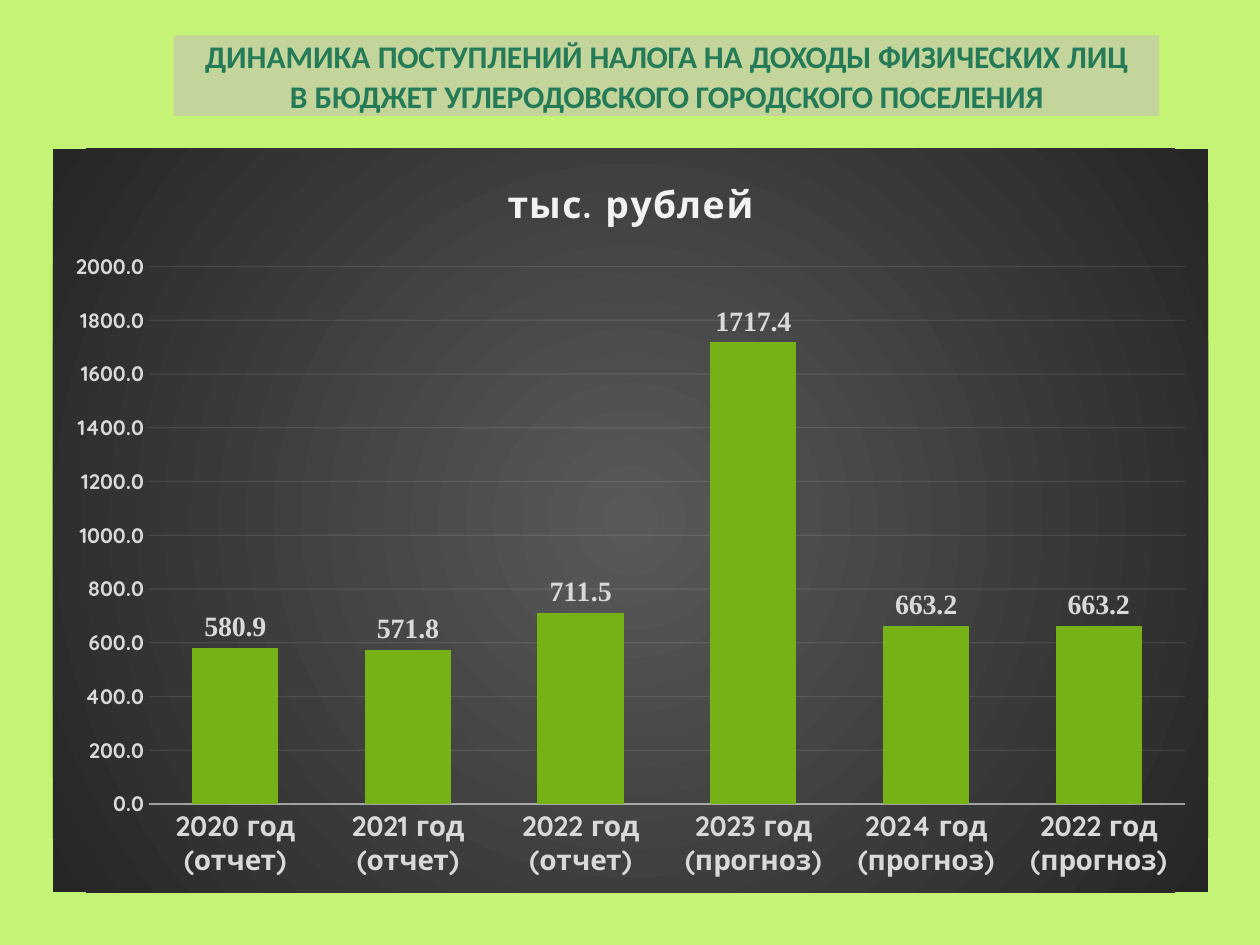
import dataclasses

import lxml.etree
import pptx
import pptx.chart.data
import pptx.dml.color
import pptx.enum.chart
import pptx.enum.shapes
import pptx.enum.text
import pptx.oxml
import pptx.oxml.ns
import pptx.util

Pt = pptx.util.Pt
qn = pptx.oxml.ns.qn

# Each heading line is a list of (text, letter spacing in points)
HEADING = [
    [("ДИНАМИКА ", 0), ("ПОСТУПЛЕНИЙ ", -0.1), ("НАЛОГА ", -0.3), ("НА ", 0),
     ("ДОХОДЫ ", -0.3), ("ФИЗИЧЕСКИХ ", -0.1), ("ЛИЦ", 0)],
    [("В ", 0), ("БЮДЖЕТ ", -0.1),
     ("УГЛЕРОДОВСКОГО ГОРОДСКОГО ПОСЕЛЕНИЯ", -0.2)],
]
UNIT = "тыс. рублей"
REVENUE = [
    ("2020 год (отчет)", 580.9),
    ("2021 год (отчет)", 571.8),
    ("2022 год (отчет)", 711.5),
    ("2023 год (прогноз)", 1717.4),
    ("2024 год (прогноз)", 663.2),
    ("2022 год (прогноз)", 663.2),
]

SLIDE_SIZE = (720, 540)
HEADING_BOX = (99.4, 20.2, 563, 46.1)
CHART_BOX = (30.2, 85, 660.2, 424.8)


@dataclasses.dataclass(frozen=True)
class Theme:
    page: str = "C5F375"
    band: str = "C3D59B"
    heading: str = "257A57"
    bar: str = "76B115"
    light: str = "F2F2F2"
    label: str = "D9D9D9"
    panel_center: str = "595959"
    panel_edge: str = "262626"
    heading_font: str = "Calibri"
    chart_font: str = "Quicksand"
    value_font: str = "Times New Roman"
    heading_size: float = 18
    title_size: float = 21.3
    label_size: float = 16
    scale_size: float = 12


THEME = Theme()


def rgb(color):
    return pptx.dml.color.RGBColor.from_string(color)


def style_font(font, name, size, color):
    font.name, font.size, font.bold = name, Pt(size), True
    font.color.rgb = rgb(color)


def add_panel(slide, box, color):
    panel = slide.shapes.add_shape(
        pptx.enum.shapes.MSO_SHAPE.RECTANGLE, *map(Pt, box))
    panel.shadow.inherit = False
    panel.fill.solid()
    panel.fill.fore_color.rgb = rgb(color)
    panel.line.fill.background()
    return panel


def add_heading(slide):
    frame = add_panel(slide, HEADING_BOX, THEME.band).text_frame
    frame.word_wrap = True
    frame.margin_left = frame.margin_right = frame.margin_bottom = 0
    frame.margin_top = Pt(0.7)
    frame.vertical_anchor = pptx.enum.text.MSO_ANCHOR.TOP
    for index, pieces in enumerate(HEADING):
        line = frame.add_paragraph() if index else frame.paragraphs[0]
        line.alignment = pptx.enum.text.PP_ALIGN.CENTER
        line.line_spacing = 1.02
        if index:
            line.space_before = Pt(0.7)
        for text, spacing in pieces:
            run = line.add_run()
            run.text = text
            style_font(run.font, THEME.heading_font, THEME.heading_size,
                       THEME.heading)
            run.font._element.set("spc", str(round(spacing * 100)))


def style_line(line, width, opacity):
    """Draw a light line; opacity is in percent."""
    line.width = Pt(width)
    line.color.rgb = rgb(THEME.light)
    color = line._get_or_add_ln().find(".//" + qn("a:srgbClr"))
    lxml.etree.SubElement(color, qn("a:alpha"), val=str(opacity * 1000))


def fill_chart_area(chart):
    """Give the chart area a radial gradient, placed before its text style."""
    area = pptx.oxml.parse_xml(f"""
        <c:spPr {pptx.oxml.ns.nsdecls("c", "a")}>
          <a:gradFill><a:gsLst>
            <a:gs pos="0"><a:srgbClr val="{THEME.panel_center}"/></a:gs>
            <a:gs pos="100000"><a:srgbClr val="{THEME.panel_edge}"/></a:gs>
          </a:gsLst><a:path path="circle">
            <a:fillToRect l="50000" t="50000" r="50000" b="50000"/>
          </a:path></a:gradFill>
          <a:ln><a:noFill/></a:ln>
        </c:spPr>""")
    chart._chartSpace.find(qn("c:txPr")).addprevious(area)


def add_revenue_chart(slide):
    revenue = pptx.chart.data.CategoryChartData(number_format="0.0")
    revenue.categories = [year for year, _ in REVENUE]
    revenue.add_series(UNIT, [value for _, value in REVENUE])
    chart = slide.shapes.add_chart(
        pptx.enum.chart.XL_CHART_TYPE.COLUMN_CLUSTERED,
        *map(Pt, CHART_BOX), revenue).chart
    chart.has_legend = False
    chart.font.name, chart.font.size = THEME.chart_font, Pt(10)
    chart.font.color.rgb = rgb("FFFFFF")
    fill_chart_area(chart)

    chart.has_title = True
    chart.chart_title.include_in_layout = False
    title = chart.chart_title.text_frame.paragraphs[0].add_run()
    title.text = UNIT
    style_font(title.font, THEME.chart_font, THEME.title_size, THEME.light)
    title.font._element.set("spc", "100")

    years, scale = chart.category_axis, chart.value_axis
    for axis, size in ((years, THEME.label_size), (scale, THEME.scale_size)):
        axis.major_tick_mark = pptx.enum.chart.XL_TICK_MARK.NONE
        axis.minor_tick_mark = pptx.enum.chart.XL_TICK_MARK.NONE
        style_font(axis.tick_labels.font, THEME.chart_font, size, THEME.label)
    style_line(years.format.line, 1, 54)
    scale.minimum_scale, scale.maximum_scale, scale.major_unit = 0, 2000, 200
    scale.tick_labels.number_format = "0.0"
    scale.tick_labels.number_format_is_linked = False
    scale.format.line.fill.background()
    style_line(scale.major_gridlines.format.line, 0.75, 10)

    plot = chart.plots[0]
    plot.gap_width, plot.overlap = 100, -24
    plot.vary_by_categories = False
    bars = plot.series[0]
    bars.format.fill.solid()
    bars.format.fill.fore_color.rgb = rgb(THEME.bar)
    values = bars.data_labels
    values.show_value = True
    values.number_format, values.number_format_is_linked = "0.0", False
    values.position = pptx.enum.chart.XL_LABEL_POSITION.OUTSIDE_END
    style_font(values.font, THEME.value_font, THEME.label_size, THEME.label)


def main():
    deck = pptx.Presentation()
    deck.slide_width, deck.slide_height = map(Pt, SLIDE_SIZE)
    slide = deck.slides.add_slide(deck.slide_layouts[6])
    add_panel(slide, (0, 0, *SLIDE_SIZE), THEME.page)
    add_heading(slide)
    add_revenue_chart(slide)
    deck.save("out.pptx")


if __name__ == "__main__":
    main()
